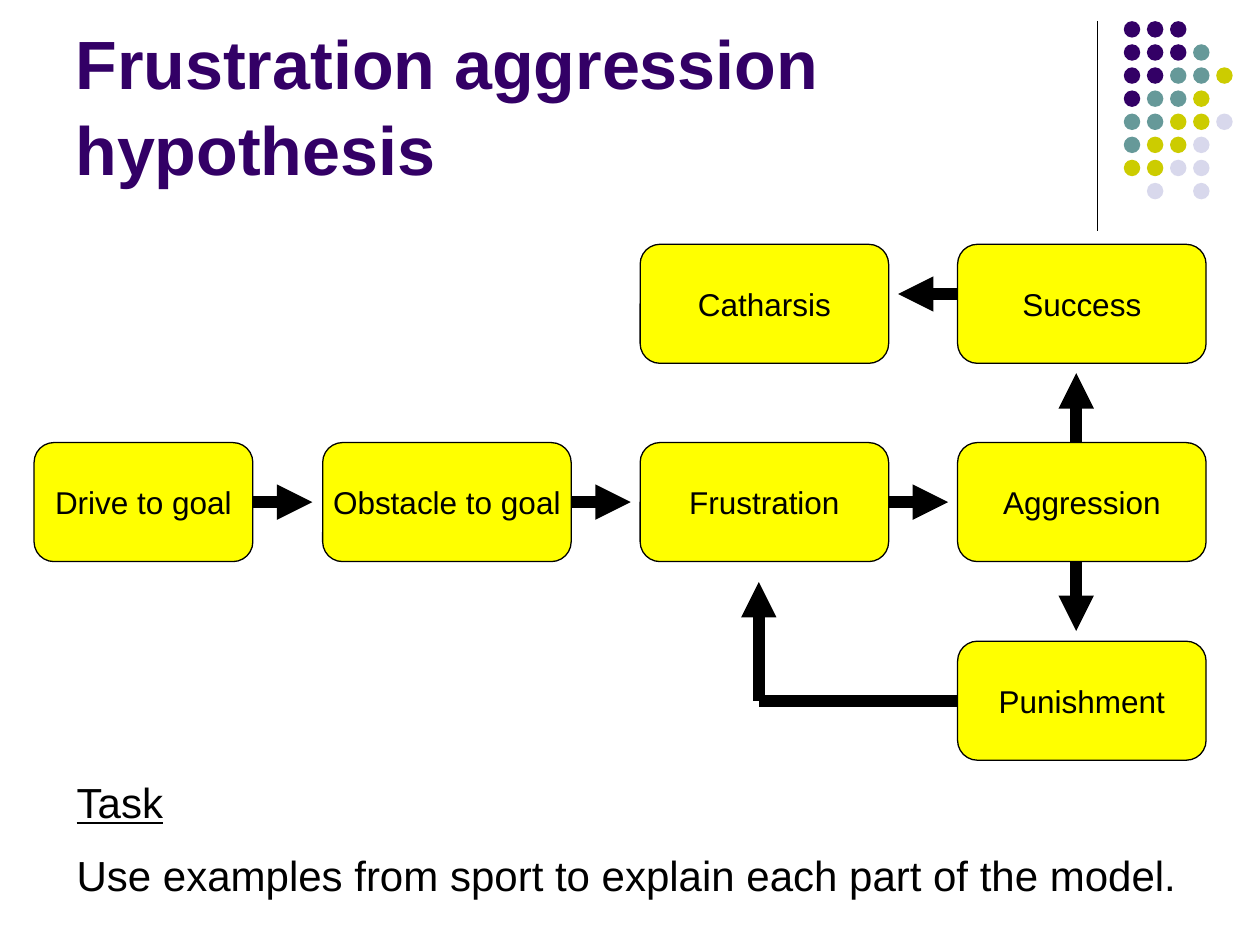
import pptx
import pptx.util
import pptx.dml.color
import pptx.enum.shapes
import pptx.enum.text
import pptx.oxml
import pptx.oxml.ns

Pt = pptx.util.Pt
RGB = pptx.dml.color.RGBColor.from_string
SHAPE = pptx.enum.shapes.MSO_SHAPE
ANCHOR = pptx.enum.text.MSO_ANCHOR
COLORS = {"purple": "330066", "teal": "669999", "olive": "CCCC00",
          "lilac": "D8D8EC", "yellow": "FFFF00", "black": "000000"}


def add_text(p, text, color, **font):
    r = p.add_run()
    r.text = text
    r.font.color.rgb = RGB(COLORS[color])
    for name, value in {"name": "Arial", **font}.items():
        setattr(r.font, name, value)


def add_line(x1, y1, x2, y2, width, arrow=False):
    line = s.shapes.add_connector(pptx.enum.shapes.MSO_CONNECTOR.STRAIGHT,
                                  Pt(x1), Pt(y1), Pt(x2), Pt(y2))
    line.line.color.rgb = RGB(COLORS["black"])
    line.line.width = Pt(width)
    if arrow:
        ln = line.line._get_or_add_ln()
        ln.append(pptx.oxml.parse_xml(
            f'<a:tailEnd {pptx.oxml.ns.nsdecls("a")} type="triangle"/>'))
    line._element.spPr.append(pptx.oxml.parse_xml(
        f'<a:effectLst {pptx.oxml.ns.nsdecls("a")}/>'))
    return line


prs = pptx.Presentation()
prs.slide_width, prs.slide_height = Pt(720), Pt(540)
s = prs.slides.add_slide(prs.slide_layouts[6])

# Corner decoration: rule and dot grid
add_line(627, 12, 627, 132, 0.75)
dot_colors = {"P": "purple", "T": "teal", "O": "olive", "L": "lilac"}
dot_rows = ["PPP", "PPPT", "PPTTO", "PTTO", "TTOOL", "TOOL", "OOLL", " L L"]
for row, codes in enumerate(dot_rows):
    for col, code in enumerate(codes):
        if code == " ":
            continue
        sp = s.shapes.add_shape(SHAPE.OVAL, Pt(642.2 + 13.2 * col),
                                Pt(12.1 + 13.2 * row), Pt(9.4), Pt(9.4))
        sp.shadow.inherit = False
        sp.fill.solid()
        sp.fill.fore_color.rgb = RGB(COLORS[dot_colors[code]])
        sp.line.fill.background()

# Title
tf = s.shapes.add_textbox(Pt(36), Pt(9.4), Pt(594), Pt(102)).text_frame
tf.word_wrap = True
tf.vertical_anchor = ANCHOR.BOTTOM
tf.paragraphs[0].line_spacing = 1.04
add_text(tf.paragraphs[0], "Frustration aggression hypothesis", "purple",
         size=Pt(39), bold=True)

# Model boxes: text, left, top, width
box_h, wide = 68, 142
col_x = [19.5, 184.4, 365.8, 547.2]
row_y = [139.6, 252.9, 366.4]
boxes = {}
for text, col, row, width in [
        ("Drive to goal", 0, 1, 125), ("Obstacle to goal", 1, 1, wide),
        ("Frustration", 2, 1, wide), ("Aggression", 3, 1, wide),
        ("Punishment", 3, 2, wide), ("Success", 3, 0, wide),
        ("Catharsis", 2, 0, wide)]:
    sp = s.shapes.add_shape(SHAPE.ROUNDED_RECTANGLE, Pt(col_x[col]),
                            Pt(row_y[row]), Pt(width), Pt(box_h))
    sp.shadow.inherit = False
    sp.fill.solid()
    sp.fill.fore_color.rgb = RGB(COLORS["yellow"])
    sp.line.color.rgb = RGB(COLORS["black"])
    sp.line.width = Pt(0.75)
    tf = sp.text_frame
    tf.word_wrap = False
    tf.vertical_anchor = ANCHOR.MIDDLE
    p = tf.paragraphs[0]
    p.alignment = pptx.enum.text.PP_ALIGN.CENTER
    add_text(p, text, "black", size=Pt(18))
    boxes[text] = sp

# Arrows along the middle row
thick, arrow_len = 6.75, 34
mid_y = row_y[1] + box_h / 2
for text in ["Drive to goal", "Obstacle to goal", "Frustration"]:
    sp = boxes[text]
    right = (sp.left + sp.width).pt if hasattr(sp.left + sp.width, "pt") else sp.left.pt + sp.width.pt
    line = add_line(right, mid_y, right + arrow_len, mid_y, thick, True)
    line.begin_connect(sp, 3)

# Arrows from Aggression up and down, and from Success to Catharsis
arrow_x = 615
add_line(arrow_x, row_y[1], arrow_x, row_y[1] - 39.7, thick, True)
add_line(arrow_x, row_y[1] + box_h, arrow_x, row_y[1] + box_h + 39.7, thick, True)
add_line(col_x[3], 168, col_x[3] - arrow_len, 168, thick, True)

# Feedback path from Punishment to Frustration
back_x, back_y = 433.6, row_y[2] + box_h / 2
line = add_line(col_x[3], back_y, back_x, back_y, thick)
line.begin_connect(boxes["Punishment"], 1)
add_line(back_x, back_y, back_x, 332.6, thick, True)

# Task
tf = s.shapes.add_textbox(Pt(36.7), Pt(440), Pt(658), Pt(79)).text_frame
tf.word_wrap = True
add_text(tf.paragraphs[0], "Task", "black", size=Pt(24), underline=True)
p = tf.add_paragraph()
p.space_before = Pt(13)
add_text(p, "Use examples from sport to explain each part of the model.",
         "black", size=Pt(24))

prs.save("out.pptx")
